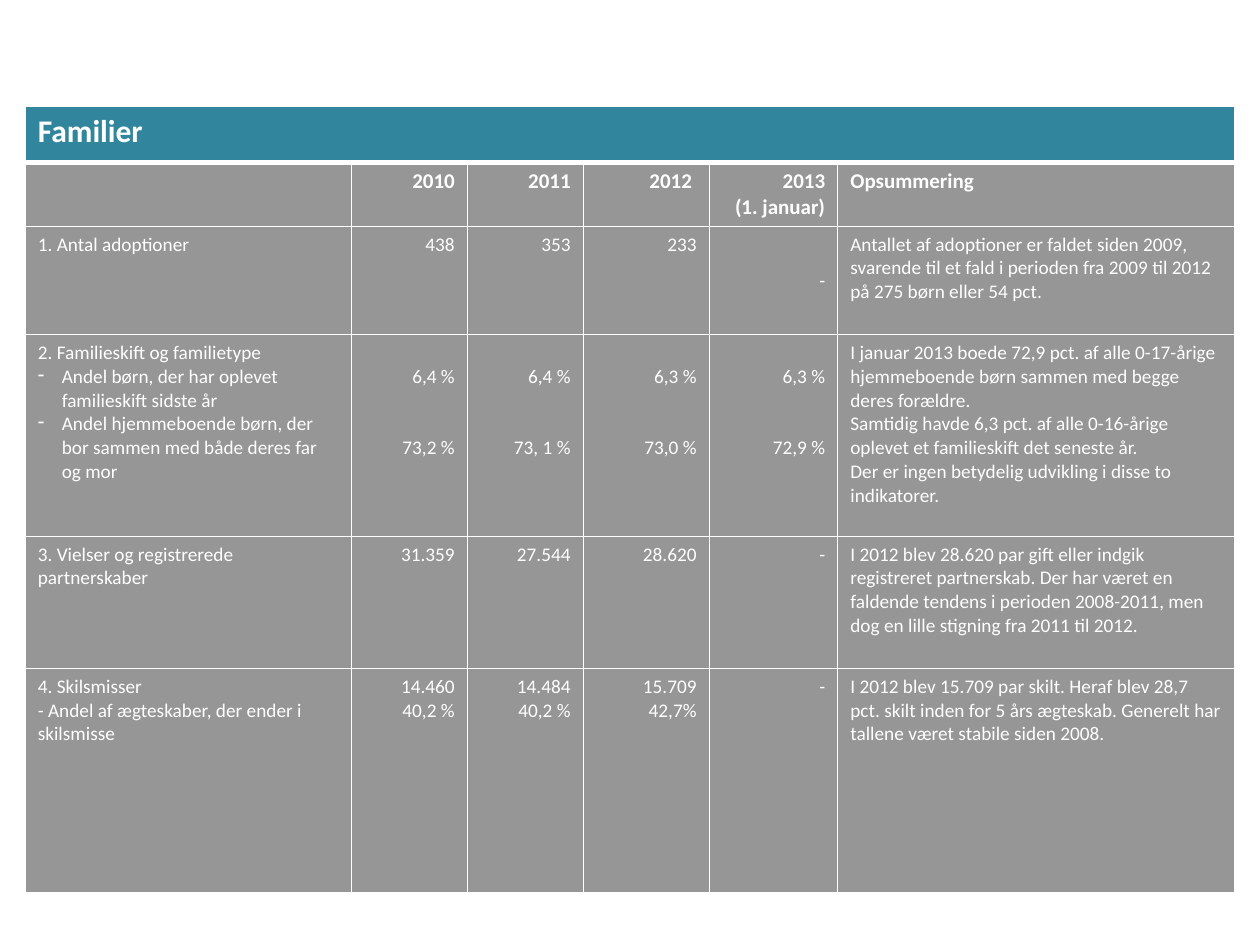
from lxml.etree import SubElement
from pptx import Presentation
from pptx.dml.color import RGBColor
from pptx.enum.text import MSO_ANCHOR, PP_ALIGN
from pptx.oxml.ns import qn
from pptx.util import Inches, Pt

WHITE = RGBColor(0xFF, 0xFF, 0xFF)
TEAL = RGBColor(0x31, 0x85, 0x9C)
GREY = RGBColor(0x96, 0x96, 0x96)

COLUMN_WIDTHS = [2.59, 0.92, 0.92, 1, 1.02, 3.15]
ROW_HEIGHTS = [0.45, 0.5, 0.86, 1.6, 1.05, 1.78]
YEAR_COLUMNS = range(1, 5)
TITLE_ROW, HEADING_ROW, ADOPTION_ROW, FAMILY_ROW = range(4)

TITLE_FORMAT = {"size": Pt(18), "bold": True, "name": "Calibri"}
HEADING_FORMAT = {"size": Pt(12), "bold": True, "name": "Calibri"}
BODY_FORMAT = {"size": Pt(11), "bold": False, "name": "Calibri"}

ROWS = [
    ["Familier", "", "", "", "", ""],
    ["", "2010", "2011", "2012 ", "2013\n(1. januar)", "Opsummering"],
    ["1. Antal adoptioner", "438", "353", "233", "-",
     "Antallet af adoptioner er faldet siden 2009, svarende til et fald i "
     "perioden fra 2009 til 2012 på 275 børn eller 54 pct."],
    ["2. Familieskift og familietype\n"
     "Andel børn, der har oplevet familieskift sidste år\n"
     "Andel hjemmeboende børn, der bor sammen med både deres far og mor",
     "6,4 %\n73,2 %", "6,4 %\n73, 1 %", "6,3 %\n73,0 %", "6,3 %\n72,9 %",
     "I januar 2013 boede 72,9 pct. af alle 0-17-årige hjemmeboende børn "
     "sammen med begge deres forældre.\n"
     "Samtidig havde 6,3 pct. af alle 0-16-årige oplevet et familieskift "
     "det seneste år.\n"
     "Der er ingen betydelig udvikling i disse to indikatorer."],
    ["3. Vielser og registrerede partnerskaber",
     "31.359", "27.544", "28.620", "-",
     "I 2012 blev 28.620 par gift eller indgik registreret partnerskab. "
     "Der har været en faldende tendens i perioden 2008-2011, men dog en "
     "lille stigning fra 2011 til 2012."],
    ["4. Skilsmisser\n- Andel af ægteskaber, der ender i skilsmisse",
     "14.460\n40,2 %", "14.484\n40,2 %", "15.709\n42,7%", "-",
     "I 2012 blev 15.709 par skilt. Heraf blev 28,7 pct. skilt inden for "
     "5 års ægteskab. Generelt har tallene været stabile siden 2008."],
]


def set_borders(cell, widths):
    properties = cell._tc.get_or_add_tcPr()
    for side, width in widths.items():
        line = SubElement(properties, qn(f"a:ln{side}"), w=str(Pt(width)))
        fill = SubElement(line, qn("a:solidFill"))
        SubElement(fill, qn("a:srgbClr"), val=str(WHITE))


def set_dash_bullet(para):
    properties = para._p.get_or_add_pPr()
    properties.set("marL", str(Inches(0.19)))
    properties.set("indent", str(Inches(-0.19)))
    SubElement(properties, qn("a:buChar"), char="-")


def write_text(cell, text, text_format, alignment):
    cell.text = text
    for para in cell.text_frame.paragraphs:
        para.alignment = alignment
        for font in [para.font] + [span.font for span in para.runs]:
            font.color.rgb = WHITE
            for name, value in text_format.items():
                setattr(font, name, value)


def fill_cell(cell, text, row, column):
    formats = {TITLE_ROW: TITLE_FORMAT, HEADING_ROW: HEADING_FORMAT}
    set_borders(cell, {"L": 1, "R": 1,
                       "T": 3 if row == HEADING_ROW else 1,
                       "B": 3 if row == TITLE_ROW else 1})
    cell.fill.solid()
    cell.fill.fore_color.rgb = TEAL if row == TITLE_ROW else GREY
    alignment = PP_ALIGN.RIGHT if column in YEAR_COLUMNS else PP_ALIGN.LEFT
    write_text(cell, text, formats.get(row, BODY_FORMAT), alignment)


def align_family_figures(table):
    for para in table.cell(FAMILY_ROW, 0).text_frame.paragraphs[1:]:
        set_dash_bullet(para)
    for column in YEAR_COLUMNS:
        cell = table.cell(FAMILY_ROW, column)
        cell.margin_top = Inches(0.24)
        cell.text_frame.paragraphs[1].space_before = Pt(27)


def add_family_table(page):
    frame = page.shapes.add_table(
        len(ROWS), len(COLUMN_WIDTHS), Inches(0.2), Inches(0.84),
        Inches(sum(COLUMN_WIDTHS)), Inches(sum(ROW_HEIGHTS)))
    table = frame.table
    for column, width in zip(table.columns, COLUMN_WIDTHS):
        column.width = Inches(width)
    for row, height in zip(table.rows, ROW_HEIGHTS):
        row.height = Inches(height)
    for row, texts in enumerate(ROWS):
        for column, text in enumerate(texts):
            fill_cell(table.cell(row, column), text, row, column)
    table.cell(TITLE_ROW, 0).merge(
        table.cell(TITLE_ROW, len(COLUMN_WIDTHS) - 1))
    table.cell(ADOPTION_ROW, 4).vertical_anchor = MSO_ANCHOR.MIDDLE
    align_family_figures(table)


def main():
    deck = Presentation()
    deck.slide_width, deck.slide_height = Inches(10), Inches(7.5)
    page = deck.slides.add_slide(deck.slide_layouts[6])
    add_family_table(page)
    deck.save("out.pptx")


if __name__ == "__main__":
    main()
